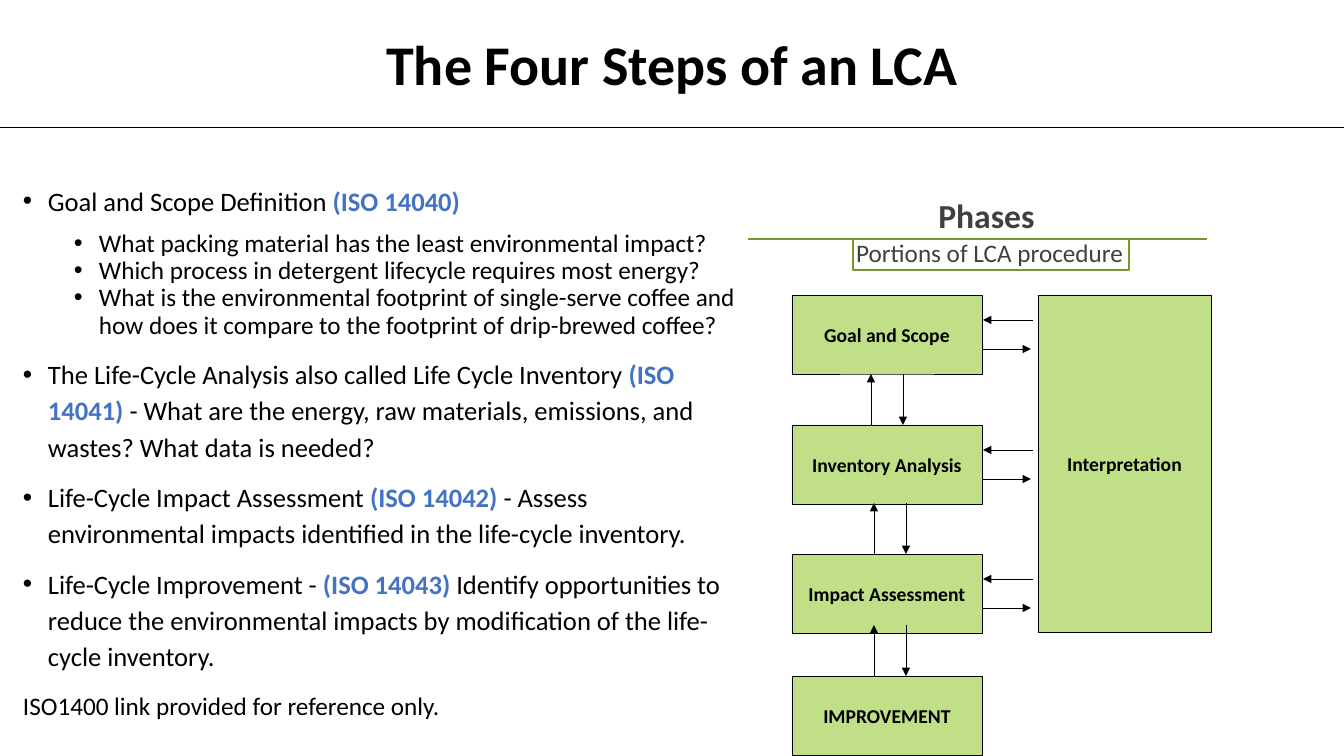
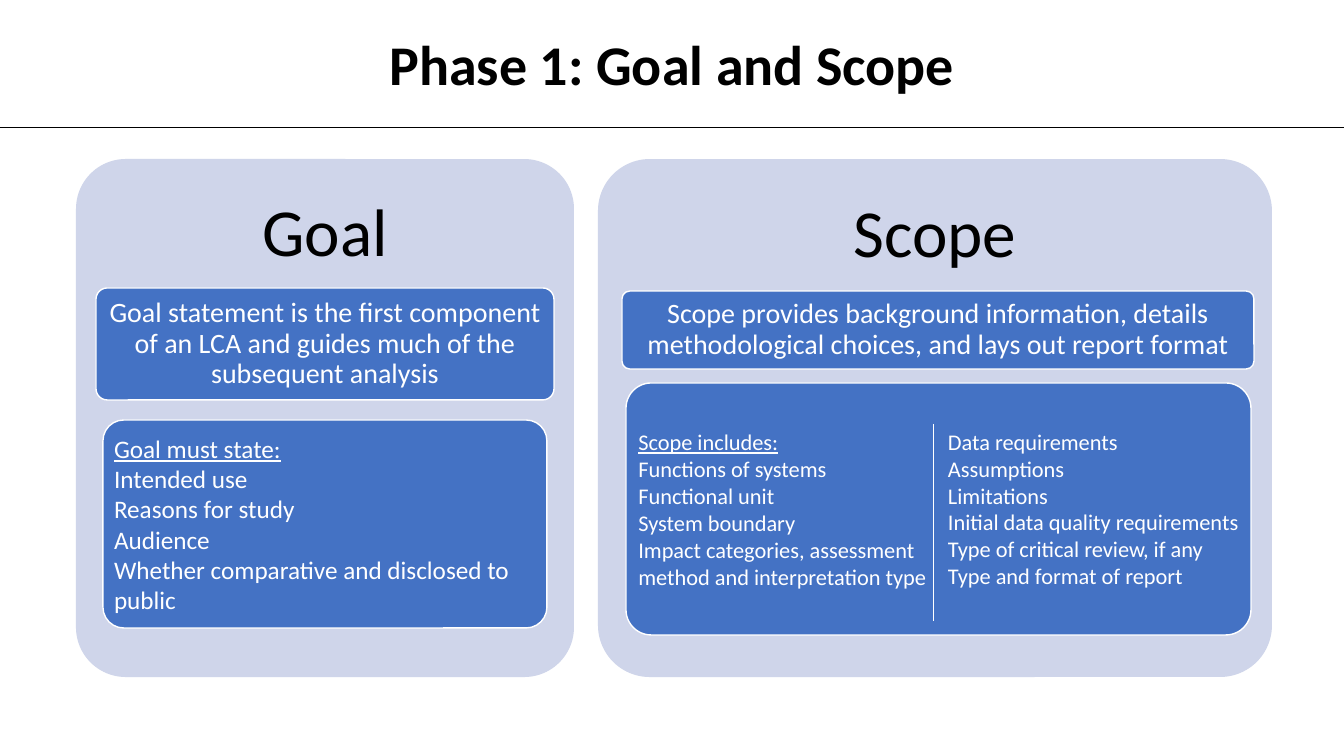
from dataclasses import dataclass

import pptx
import pptx.dml.color
import pptx.enum.shapes
import pptx.enum.text
import pptx.oxml.ns
import pptx.util
from lxml import etree

PX_PER_INCH = 100.8
SLIDE_W, SLIDE_H = 1344, 756
SHAPE = pptx.enum.shapes.MSO_SHAPE
ALIGN = pptx.enum.text.PP_ALIGN
ANCHOR = pptx.enum.text.MSO_ANCHOR


@dataclass(frozen=True)
class Theme:
    font: str = "Calibri"
    black: str = "000000"
    white: str = "FFFFFF"
    grey: str = "404040"
    blue: str = "4472C4"
    pale_blue: str = "CFD5EA"
    green: str = "C1DF87"
    dark_green: str = "739A28"
    card_title: int = 48
    title: int = 40
    heading: int = 24
    summary: int = 20
    body: int = 19
    detail: int = 18
    small: int = 16
    label: int = 14
    hairline: float = 0.5


T = Theme()


def px(n):
    return pptx.util.Emu(round(n * 914400 / PX_PER_INCH))


def rgb(color):
    return pptx.dml.color.RGBColor.from_string(color)


def child(parent, tag, **attrs):
    return etree.SubElement(parent, pptx.oxml.ns.qn(tag), attrs)


def write(tf, runs, size=T.detail, color=T.black, bold=False, underline=False,
          align=ALIGN.LEFT, margin=0, hanging=0, bullet=None,
          spacing=1.0, before=0, after=0):
    """Add one paragraph; runs is a string or a list of (text, font overrides)."""
    p = tf.paragraphs[0]
    if p.runs:
        p = tf.add_paragraph()
    pPr = p._p.get_or_add_pPr()
    pPr.set("marL", str(px(margin)))
    pPr.set("indent", str(-px(hanging)))
    if bullet:
        child(pPr, "a:buFont", typeface="Arial")
        child(pPr, "a:buChar", char=bullet)
    p.alignment, p.line_spacing = align, spacing
    p.space_before, p.space_after = pptx.util.Pt(before), pptx.util.Pt(after)
    for text, override in [(runs, {})] if isinstance(runs, str) else runs:
        look = dict(size=size, color=color, bold=bold, underline=underline) | override
        for i, line in enumerate(text.split("\n")):
            if i:
                p.add_line_break()
            r = p.add_run()
            r.text = line
            r.font.name, r.font.size = T.font, pptx.util.Pt(look["size"])
            r.font.bold, r.font.underline = look["bold"], look["underline"]
            r.font.color.rgb = rgb(look["color"])


def set_frame(tf, anchor, inset_x, inset_y):
    tf.word_wrap, tf.vertical_anchor = True, anchor
    tf.margin_left = tf.margin_right = px(inset_x)
    tf.margin_top = tf.margin_bottom = px(inset_y)
    return tf


def add_textbox(s, box, anchor=ANCHOR.TOP, inset_x=10, inset_y=5):
    tf = s.shapes.add_textbox(*map(px, box)).text_frame
    return set_frame(tf, anchor, inset_x, inset_y)


def add_box(s, box, fill=None, line=None, width=T.hairline, kind=SHAPE.RECTANGLE,
            anchor=ANCHOR.MIDDLE, inset_x=6, inset_y=4):
    sp = s.shapes.add_shape(kind, *map(px, box))
    sp.shadow.inherit = False
    if kind == SHAPE.ROUNDED_RECTANGLE:
        sp.adjustments[0] = 0.1
    if fill:
        sp.fill.solid()
        sp.fill.fore_color.rgb = rgb(fill)
    else:
        sp.fill.background()
    if line:
        sp.line.color.rgb, sp.line.width = rgb(line), pptx.util.Pt(width)
    else:
        sp.line.fill.background()
    return set_frame(sp.text_frame, anchor, inset_x, inset_y)


def add_line(s, x1, y1, x2, y2, color=T.black, width=T.hairline, arrow=False):
    c = s.shapes.add_connector(pptx.enum.shapes.MSO_CONNECTOR.STRAIGHT,
                               *map(px, (x1, y1, x2, y2)))
    c.line.color.rgb, c.line.width = rgb(color), pptx.util.Pt(width)
    spPr = c._element.spPr
    if arrow:
        child(spPr.find(pptx.oxml.ns.qn("a:ln")), "a:tailEnd", type="triangle")
    child(spPr, "a:effectLst")


def add_titled_slide(prs, title):
    s = prs.slides.add_slide(prs.slide_layouts[6])
    tf = add_textbox(s, (286, 31, 772, 72), ANCHOR.MIDDLE)
    write(tf, title, size=T.title, bold=True, align=ALIGN.CENTER, spacing=0.9)
    add_line(s, 0, 127, SLIDE_W, 127)
    return s


def add_step_list(s):
    standard = dict(color=T.blue, bold=True)
    step = dict(size=T.body, margin=25, hanging=25, bullet="•", spacing=1.14)
    question = dict(margin=76, hanging=25, bullet="•")
    tf = add_textbox(s, (13, 175, 739, 555))
    write(tf, [("Goal and Scope Definition ", {}), ("(ISO 14040)", standard)], **step)
    write(tf, "What packing material has the least environmental impact?",
          spacing=1.14, before=5, **question)
    for text in (
        "Which process in detergent lifecycle requires most energy?",
        "What is the environmental footprint of single-serve coffee and how does it "
        "compare to the footprint of drip-brewed coffee?",
    ):
        write(tf, text, spacing=0.9, **question)
    for name, iso, rest in (
        ("The Life-Cycle Analysis also called Life Cycle Inventory ", "(ISO 14041) ",
         "- What are the energy, raw materials, emissions, and wastes? "
         "What data is needed?"),
        ("Life-Cycle Impact Assessment ", "(ISO 14042) ",
         "- Assess environmental impacts identified in the life-cycle inventory."),
        ("Life-Cycle Improvement - ", "(ISO 14043)",
         " Identify opportunities to reduce the environmental impacts by "
         "modification of the life-cycle inventory."),
    ):
        write(tf, [(name, {}), (iso, standard), (rest, {})], before=10, **step)
    write(tf, "ISO1400 link provided for reference only.", spacing=1.14, before=10)


def add_phase_heading(s):
    tf = add_textbox(s, (704, 194, 555, 101), inset_x=0)
    heading = dict(color=T.grey, align=ALIGN.CENTER, spacing=0.9)
    write(tf, "Phases", size=T.heading, bold=True, margin=10, after=2, **heading)
    write(tf, "Portions of LCA procedure ", margin=22, before=2, **heading)
    add_line(s, 748, 239, 1207, 239, color=T.dark_green, width=1.5)
    add_box(s, (853, 239, 276, 31), line=T.dark_green, width=1.5)


def add_phase_diagram(s):
    left, width, height = 792, 190, 79
    right = left + width
    phases = [("Goal and Scope", 295), ("Inventory Analysis", 425),
              ("Impact Assessment", 554), ("IMPROVEMENT", 676)]
    boxes = [(name, (left, y, width, height)) for name, y in phases]
    boxes.append(("Interpretation", (1038, 295, 173, 337)))
    for name, box in boxes:
        tf = add_box(s, box, fill=T.green, line=T.black)
        write(tf, name, size=T.label, bold=True, align=ALIGN.CENTER, spacing=1.05)
    for _, y in phases[:3]:
        add_line(s, 1033, y + 25, right + 1, y + 25, arrow=True)
        add_line(s, right + 1, y + 54, 1031, y + 54, arrow=True)
    for x, top in ((871, 374), (874, 503), (874, 625)):
        add_line(s, x, top + 51, x, top, arrow=True)
        add_line(s, x + 32, top, x + 32, top + 51, arrow=True)


def add_card(s, title, box, summary, summary_box, details, detail_box, detail_size):
    rounded = dict(kind=SHAPE.ROUNDED_RECTANGLE)
    inner = dict(fill=T.blue, line=T.white, width=1, **rounded)
    centred = dict(align=ALIGN.CENTER, spacing=0.9)
    tf = add_box(s, box, fill=T.pale_blue, anchor=ANCHOR.TOP, inset_y=25, **rounded)
    write(tf, title, size=T.card_title, **centred)
    tf = add_box(s, summary_box, **inner)
    write(tf, summary, size=T.summary, color=T.white, **centred)
    tf = add_box(s, detail_box, inset_x=5, **inner)
    for i, text in enumerate(details):
        write(tf, text, size=detail_size, color=T.white, underline=i == 0)


def build_steps(prs):
    s = add_titled_slide(prs, "The Four Steps of an LCA")
    add_step_list(s)
    add_phase_heading(s)
    add_phase_diagram(s)


def build_goal_and_scope(prs):
    s = add_titled_slide(prs, "Phase 1: Goal and Scope")
    add_card(
        s, "Goal", (76, 159, 498, 518),
        "Goal statement is the first component of an LCA and guides much of the "
        "subsequent analysis", (96, 288, 458, 112),
        ("Goal must state:", "Intended use", "Reasons for study", "Audience",
         "Whether comparative and disclosed to public"),
        (103, 420, 444, 208), T.detail)
    add_card(
        s, "Scope", (598, 159, 674, 518),
        "Scope provides background information, details methodological choices, "
        "and lays out report format", (622, 291, 632, 78),
        ("Scope includes:", "Functions of systems", "Functional unit",
         "System boundary",
         "Impact categories, assessment \nmethod and interpretation type"),
        (626, 383, 625, 252), T.small)
    tf = add_textbox(s, (938, 423, 312, 173))
    for text in ("Data requirements", "Assumptions", "Limitations",
                 "Initial data quality requirements",
                 "Type of critical review, if any", "Type and format of report"):
        write(tf, text, size=T.small, color=T.white)
    add_line(s, 933, 424, 933, 621, color=T.white)


def main():
    prs = pptx.Presentation()
    prs.slide_width, prs.slide_height = px(SLIDE_W), px(SLIDE_H)
    build_steps(prs)
    build_goal_and_scope(prs)
    prs.save("out.pptx")


if __name__ == "__main__":
    main()
